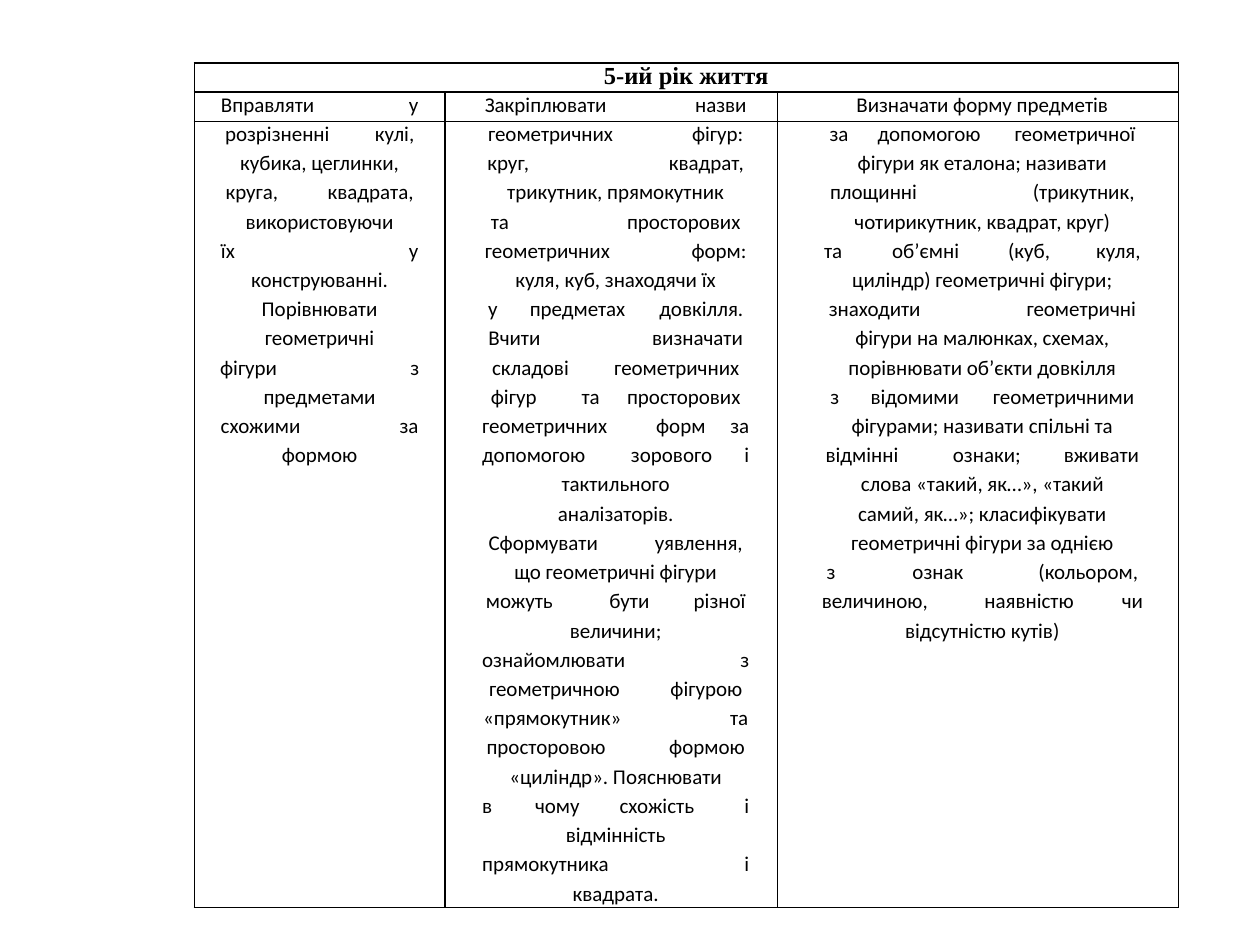
from lxml import etree
from pptx import Presentation
from pptx.dml.color import RGBColor
from pptx.enum.text import PP_ALIGN
from pptx.oxml.ns import qn
from pptx.util import Pt

CENTER = PP_ALIGN.CENTER
BLACK = RGBColor(0, 0, 0)
NO_TABLE_STYLE = "{2D5ABB26-0587-4C30-8999-92F81FD0307C}"
HEADING_INDENT = Pt(152)

# Each line of text is followed by its tab stops in points.
recognise_shapes = [
    ("Вправляти\tу", 107.3),
    ("розрізненні\tкулі,", 85.7),
    ("кубика, цеглинки,",),
    ("круга,\tквадрата,", 58.3),
    ("використовуючи",),
    ("їх\tу", 107.3),
    ("конструюванні.",),
    ("Порівнювати",),
    ("геометричні",),
    ("фігури\tз", 108.7),
    ("предметами",),
    ("схожими\tза", 102.2),
    ("формою",),
]
name_shapes = [
    ("Закріплювати\tназви", 120.2),
    ("геометричних\tфігур:", 116.6),
    ("круг,\tквадрат,", 103.7),
    ("трикутник, прямокутник",),
    ("та\tпросторових", 77.8),
    ("геометричних\tформ:", 118.1),
    ("куля, куб, знаходячи їх",),
    ("у\tпредметах\tдовкілля.", 23.8, 97.9),
    ("Вчити\tвизначати", 93.6),
    ("складові\tгеометричних", 69.8),
    ("фігур\tта\tпросторових", 51.8, 77.8),
    ("геометричних\tформ\tза", 99.4, 141.8),
    ("допомогою\tзорового\tі", 85, 149.8),
    ("тактильного",),
    ("аналізаторів.",),
    ("Сформувати\tуявлення,", 95),
    ("що геометричні фігури",),
    ("можуть\tбути\tрізної", 70.6, 118.8),
    ("величини;",),
    ("ознайомлювати\tз", 147.6),
    ("геометричною\tфігурою", 103.7),
    ("«прямокутник»\tта", 141.1),
    ("просторовою\tформою", 104.4),
    ("«циліндр». Пояснювати",),
    ("в\tчому\tсхожість\tі", 30.2, 78.5, 149.8),
    ("відмінність",),
    ("прямокутника\tі", 149.8),
    ("квадрата.",),
]
classify_shapes = [
    ("Визначати форму предметів",),
    ("за\tдопомогою\tгеометричної", 27.4, 105.8),
    ("фігури як еталона; називати",),
    ("площинні\t(трикутник,", 115.9),
    ("чотирикутник, квадрат, круг)",),
    ("та\tоб’ємні\t(куб,\tкуля,", 38.9, 105.1, 155.5),
    ("циліндр) геометричні фігури;",),
    ("знаходити\tгеометричні", 113),
    ("фігури на малюнках, схемах,",),
    ("порівнювати об’єкти довкілля",),
    ("з\tвідомими\tгеометричними", 23, 92.9),
    ("фігурами; називати спільні та",),
    ("відмінні\tознаки;\tвживати", 72.7, 136.1),
    ("слова «такий, як…», «такий",),
    ("самий, як…»; класифікувати",),
    ("геометричні фігури за однією",),
    ("з\tознак\t(кольором,", 49, 121),
    ("величиною,\tнаявністю\tчи", 92.9, 171.4),
    ("відсутністю кутів)",),
]
# Text lines, column width, left indent
columns = [
    (recognise_shapes, 143.3, 0),
    (name_shapes, 190.1, 5),
    (classify_shapes, 229, 5),
]


def prepare_cell(cell, sides):
    """Clear margins and fill, and draw black borders on the sides, given in L R T B order."""
    cell.margin_left = cell.margin_right = cell.margin_top = cell.margin_bottom = 0
    cell.fill.background()
    properties = cell._tc.get_or_add_tcPr()
    for position, side in enumerate(sides):
        border = etree.Element(qn(f"a:ln{side}"), w=str(Pt(1)))
        paint = etree.SubElement(border, qn("a:solidFill"))
        etree.SubElement(paint, qn("a:srgbClr"), val=str(BLACK))
        properties.insert(position, border)


def format_text(paragraph, font_name, size, bold):
    paragraph.alignment = CENTER
    for run in paragraph.runs:
        run.font.name = font_name
        run.font.size = Pt(size)
        run.font.bold = bold
        run.font.color.rgb = BLACK


prs = Presentation()
prs.slide_width, prs.slide_height = Pt(720), Pt(540)
slide = prs.slides.add_slide(prs.slide_layouts[6])

line_count = len(name_shapes)
table = slide.shapes.add_table(
    line_count + 1, len(columns), Pt(111), Pt(36), Pt(562.4), Pt(483.8)
).table
table.first_row = table.horz_banding = False
table._tbl.tblPr.find(qn("a:tableStyleId")).text = NO_TABLE_STYLE
for row in table.rows:
    row.height = Pt(16.71)
table.rows[line_count].height = Pt(15.1)

for column in range(len(columns)):
    prepare_cell(table.cell(0, column), "LRTB")
heading_cell = table.cell(0, 0)
heading_cell.merge(table.cell(0, len(columns) - 1))
heading = heading_cell.text_frame.paragraphs[0]
heading.text = "5-ий рік життя"
heading.line_spacing = Pt(15.1)
format_text(heading, "Times New Roman", 14, True)
for margin in ("marL", "marR"):
    heading._p.get_or_add_pPr().set(margin, str(HEADING_INDENT))

for column, (lines, width, indent) in enumerate(columns):
    table.columns[column].width = Pt(width)
    for row in range(1, line_count + 1):
        cell = table.cell(row, column)
        edge = "T" if row == 1 else "B" if row == line_count else ""
        prepare_cell(cell, "LR" + edge)
        paragraph = cell.text_frame.paragraphs[0]
        if row > len(lines):
            # A small end mark keeps the empty cell from stretching its row.
            etree.SubElement(paragraph._p, qn("a:endParaRPr"), sz="1200")
            continue
        text, *stops = lines[row - 1]
        paragraph.text = text
        properties = paragraph._p.get_or_add_pPr()
        properties.set("marL", str(Pt(indent)))
        if stops:
            tabs = etree.SubElement(properties, qn("a:tabLst"))
            for stop in stops:
                etree.SubElement(tabs, qn("a:tab"), pos=str(Pt(stop)), algn="l")
        format_text(paragraph, "Calibri", 12, False)

prs.save("out.pptx")
